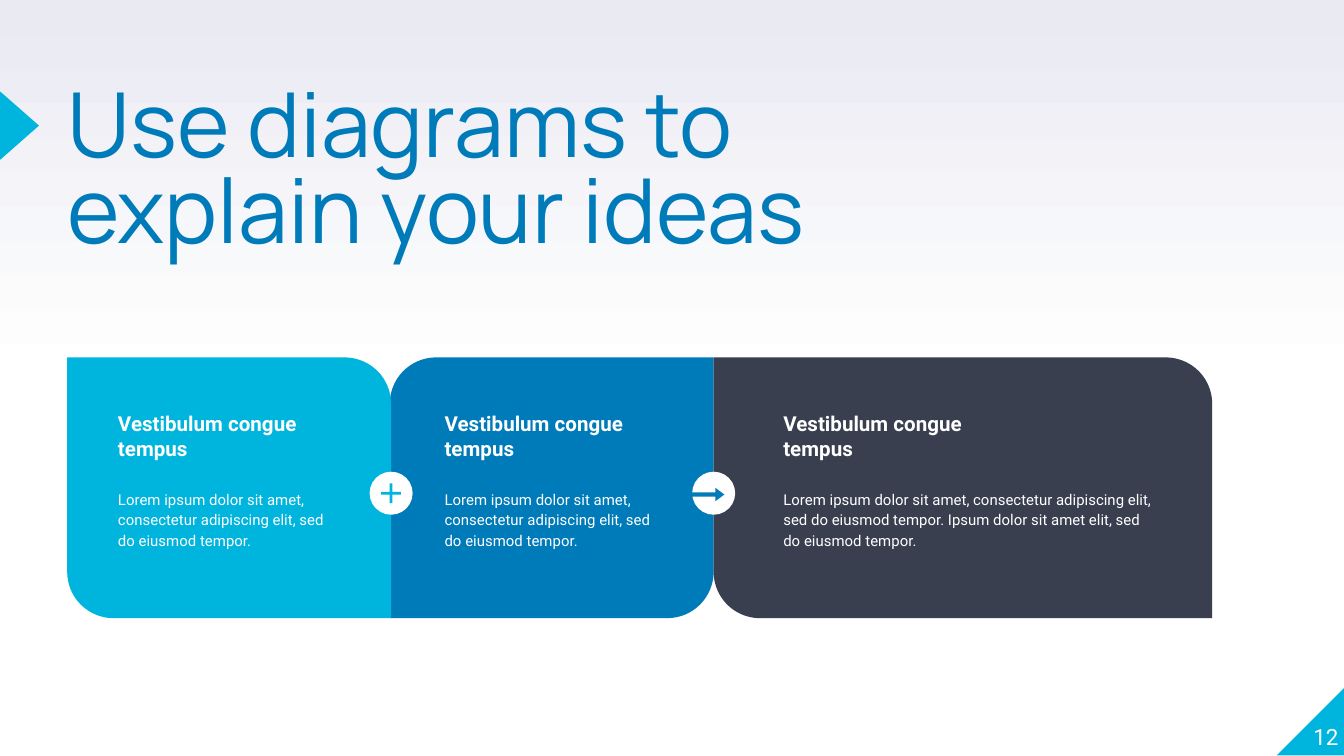
from pptx import Presentation
from pptx.dml.color import RGBColor
from pptx.enum.shapes import MSO_SHAPE as SHAPE
from pptx.enum.text import MSO_ANCHOR as ANCHOR, PP_ALIGN as ALIGN
from pptx.util import Inches, Pt

CYAN = RGBColor(0x00, 0xB5, 0xDD)
BLUE = RGBColor(0x00, 0x7B, 0xB9)
SLATE = RGBColor(0x3A, 0x3F, 0x50)
LAVENDER = RGBColor(0xE9, 0xEA, 0xF2)
WHITE = RGBColor(0xFF, 0xFF, 0xFF)

SLIDE_WIDTH = 10
SLIDE_HEIGHT = SLIDE_WIDTH * 9 / 16
CARD_TOP, CARD_HEIGHT, CORNER = 2.66, 1.94, 0.178
HEADING = "Vestibulum congue tempus"
LOREM = ("Lorem ipsum dolor sit amet, consectetur adipiscing elit, "
         "sed do eiusmod tempor.")

# left, width, colour, corner adjustments, text left, text width, heading, body
CARDS = [
    (2.9, 2.41, BLUE, (CORNER, 0), 3.21, 1.8, HEADING, LOREM),
    (0.5, 2.41, CYAN, (0, CORNER), 0.78, 1.8, HEADING, LOREM),
    (5.31, 3.71, SLATE, (0, CORNER), 5.73, 2.99, "Vestibulum congue\ntempus",
     LOREM + " Ipsum dolor sit amet elit, sed do eiusmod tempor."),
]


def set_background(slide):
    fill = slide.background.fill
    fill.gradient()
    fill.gradient_angle = 90
    for stop, position, color in zip(fill.gradient_stops, (0.5, 1), (WHITE, LAVENDER)):
        stop.position = position
        stop.color.rgb = color


def add_shape(slide, kind, left, top, width, height, color, adjustments=()):
    s = slide.shapes.add_shape(kind, Inches(left), Inches(top),
                               Inches(width), Inches(height))
    s.shadow.inherit = False
    s.fill.solid()
    s.fill.fore_color.rgb = color
    s.line.fill.background()
    for i, value in enumerate(adjustments):
        s.adjustments[i] = value
    return s


def add_text(slide, text, left, top, width, height, size, color=WHITE,
             font="Roboto", inset=0.0, bold=False, spacing=1.0,
             align=ALIGN.LEFT, anchor=ANCHOR.TOP):
    box = slide.shapes.add_textbox(Inches(left), Inches(top),
                                   Inches(width), Inches(height))
    tf = box.text_frame
    tf.word_wrap = True
    tf.vertical_anchor = anchor
    tf.margin_left = tf.margin_right = Inches(inset)
    tf.margin_top = tf.margin_bottom = Inches(inset)
    p = tf.paragraphs[0]
    p.text = text
    p.alignment = align
    p.line_spacing = spacing
    p.font.name = font
    p.font.size = Pt(size)
    p.font.bold = bold
    p.font.color.rgb = color
    return p


def add_card(slide, left, width, color, corners, text_left, text_width, heading, body):
    add_shape(slide, SHAPE.ROUND_2_DIAG_RECTANGLE, left, CARD_TOP,
              width, CARD_HEIGHT, color, corners)
    add_text(slide, heading, text_left, 2.96, text_width, 0.57, 11,
             inset=0.1, bold=True)
    p = add_text(slide, body, text_left, 3.53, text_width, 0.63, 8,
                 inset=0.1, spacing=1.15)
    p.space_after = Pt(16)


def add_badge(slide, left):
    add_shape(slide, SHAPE.OVAL, left, 3.51, 0.32, 0.32, WHITE)


def main():
    prs = Presentation()
    prs.slide_width, prs.slide_height = Inches(SLIDE_WIDTH), Inches(SLIDE_HEIGHT)
    slide = prs.slides.add_slide(prs.slide_layouts[6])
    set_background(slide)

    # Corner and title pointer
    corner = add_shape(slide, SHAPE.RIGHT_TRIANGLE, 9.5, 5.11, 0.51, 0.51, CYAN)
    corner.element.spPr.xfrm.set("flipH", "1")
    pointer = add_shape(slide, SHAPE.ISOSCELES_TRIANGLE, -0.11, 0.79, 0.51, 0.29, CYAN)
    pointer.rotation = 90

    # Title and page number
    add_text(slide, "Use diagrams to explain your ideas", 0.5, 0.66, 6.17, 1.18,
             48, BLUE, "Manrope", spacing=0.8)
    add_text(slide, "12", 9.46, 5.07, 0.5, 0.51, 12,
             align=ALIGN.RIGHT, anchor=ANCHOR.BOTTOM)

    # Cards
    for card in CARDS:
        add_card(slide, *card)

    # Badges on the seams between cards
    add_badge(slide, 5.15)
    add_shape(slide, SHAPE.RIGHT_ARROW, 5.15, 3.63, 0.24, 0.1, BLUE, (0.32, 0.67))
    add_badge(slide, 2.75)
    add_shape(slide, SHAPE.MATH_PLUS, 2.81, 3.57, 0.2, 0.2, CYAN, (0.099,))

    prs.save("out.pptx")


if __name__ == "__main__":
    main()
